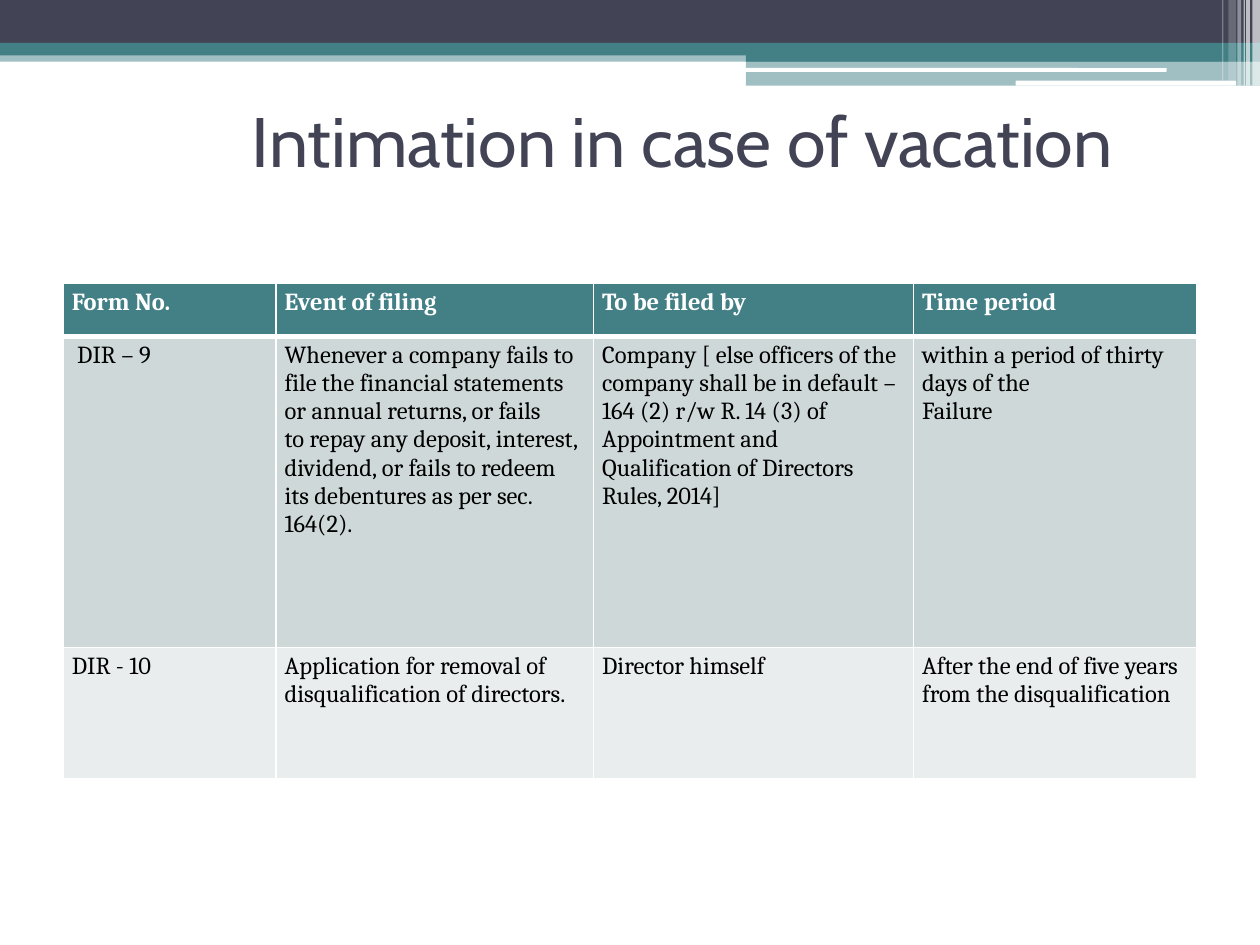
from lxml import etree
from pptx import Presentation
from pptx.dml.color import RGBColor
from pptx.enum.shapes import MSO_SHAPE
from pptx.enum.text import MSO_ANCHOR, PP_ALIGN
from pptx.oxml.ns import qn
from pptx.util import Inches, Pt

RECT, ROUND = MSO_SHAPE.RECTANGLE, MSO_SHAPE.ROUNDED_RECTANGLE
MIDDLE, CENTER = MSO_ANCHOR.MIDDLE, PP_ALIGN.CENTER

COLORS = {
    "dark": "424456", "teal": "438086", "white": "FFFFFF", "black": "000000",
    "band_dark": "CFD8D9", "band_light": "E9EDED",
}
TITLE_FONT, TABLE_FONT = "Cabin", "Cambria"

TITLE = "Intimation in case of vacation"
# Each cell is a list of paragraphs
ROWS = [
    [["Form No."], ["Event of filing"], ["To be filed by"], ["Time period"]],
    [
        [" DIR – 9"],
        ["Whenever a company fails to file the financial statements or annual returns, or fails",
         "to repay any deposit, interest, dividend, or fails to redeem its debentures "
         "as per sec. 164(2)."],
        ["Company [ else officers of the company shall be in default – 164 (2) r/w R. 14 (3) of "
         "Appointment and Qualification of Directors Rules, 2014]"],
        ["within a period of thirty days of the", "Failure"],
    ],
    [
        ["DIR - 10"],
        ["Application for removal of disqualification of directors."],
        ["Director himself"],
        ["After the end of five years from the disqualification"],
    ],
]
COLUMN_WIDTHS = [1.69, 2.52, 2.54, 2.25]
# Height, fill, text colour, bold, bottom border in points
ROW_STYLES = [
    (0.42, "teal", "white", True, 3),
    (2.47, "band_dark", "black", False, 1),
    (1.04, "band_light", "black", False, 1),
]

# Header bands: shape, left, top, width, height, colour, opacity in percent
BANDS = [
    (RECT, 0, 0.4, 10, 0.09, "teal", 50),
    (RECT, 0, 0, 10, 0.34, "dark", 100),
    (RECT, 0, 0.34, 10, 0.1, "teal", 100),
    (RECT, 5.92, 0.39, 4.08, 0.1, "teal", 100),
    (RECT, 5.92, 0.48, 4.08, 0.2, "teal", 50),
    (ROUND, 5.91, 0.54, 3.35, 0.03, "white", 100),
    (ROUND, 8.06, 0.64, 1.75, 0.04, "white", 100),
]
# Vertical stripes: left, width, height, opacity in percent
STRIPES = [
    (9.94, 0.06, 0.68, 65), (9.89, 0.03, 0.68, 65), (9.87, 0.01, 0.68, 60),
    (9.82, 0.03, 0.68, 40), (9.75, 0.06, 0.64, 20), (9.7, 0.01, 0.64, 30),
]


def rgb(name):
    return RGBColor.from_string(COLORS[name])


def add_band(slide, kind, left, top, width, height, color, opacity):
    band = slide.shapes.add_shape(kind, *map(Inches, (left, top, width, height)))
    band.shadow.inherit = False
    band.line.fill.background()
    band.fill.solid()
    band.fill.fore_color.rgb = rgb(color)
    if opacity < 100:
        color_xml = band.fill._xPr.find(qn("a:solidFill"))[0]
        etree.SubElement(color_xml, qn("a:alpha"), val=str(opacity * 1000))


def add_run(paragraph, text, font, size, color, bold=False):
    run = paragraph.add_run()
    run.text = text
    run.font.name, run.font.size, run.font.bold = font, Pt(size), bold
    run.font.color.rgb = rgb(color)


def set_borders(cell, widths):
    properties = cell._tc.get_or_add_tcPr()
    for position, (side, width) in enumerate(widths.items()):
        line = etree.Element(qn(f"a:ln{side}"), w=str(Pt(width)))
        fill = etree.SubElement(line, qn("a:solidFill"))
        etree.SubElement(fill, qn("a:srgbClr"), val=COLORS["white"])
        properties.insert(position, line)


def fill_cell(cell, paragraphs, fill, color, bold, top, bottom):
    cell.margin_left = cell.margin_right = Inches(0.07)
    cell.margin_top = cell.margin_bottom = Inches(0.04)
    cell.fill.solid()
    cell.fill.fore_color.rgb = rgb(fill)
    set_borders(cell, {"L": 1, "R": 1, "T": top, "B": bottom})
    frame = cell.text_frame
    for index, text in enumerate(paragraphs):
        paragraph = frame.add_paragraph() if index else frame.paragraphs[0]
        add_run(paragraph, text, TABLE_FONT, 14, color, bold)


def main():
    prs = Presentation()
    prs.slide_width, prs.slide_height = Inches(10), Inches(7.5)
    slide = prs.slides.add_slide(prs.slide_layouts[6])

    # Header decoration
    for band in BANDS:
        add_band(slide, *band)
    for left, width, height, opacity in STRIPES:
        add_band(slide, RECT, left, 0, width, height, "white", opacity)

    # Title
    title = slide.shapes.add_textbox(*map(Inches, (1.33, 0.71, 8.17, 0.79))).text_frame
    title.word_wrap = True
    title.vertical_anchor = MIDDLE
    title.paragraphs[0].alignment = CENTER
    add_run(title.paragraphs[0], TITLE, TITLE_FONT, 40, "dark")

    # Filing table
    heights = [style[0] for style in ROW_STYLES]
    filings = slide.shapes.add_table(
        len(ROWS), len(COLUMN_WIDTHS), Inches(0.5), Inches(2.25),
        Inches(sum(COLUMN_WIDTHS)), Inches(sum(heights))).table
    for column, width in zip(filings.columns, COLUMN_WIDTHS):
        column.width = Inches(width)
    top = 1
    for row, texts, style in zip(filings.rows, ROWS, ROW_STYLES):
        height, fill, color, bold, bottom = style
        row.height = Inches(height)
        for cell, paragraphs in zip(row.cells, texts):
            fill_cell(cell, paragraphs, fill, color, bold, top, bottom)
        top = bottom

    prs.save("out.pptx")


if __name__ == "__main__":
    main()
